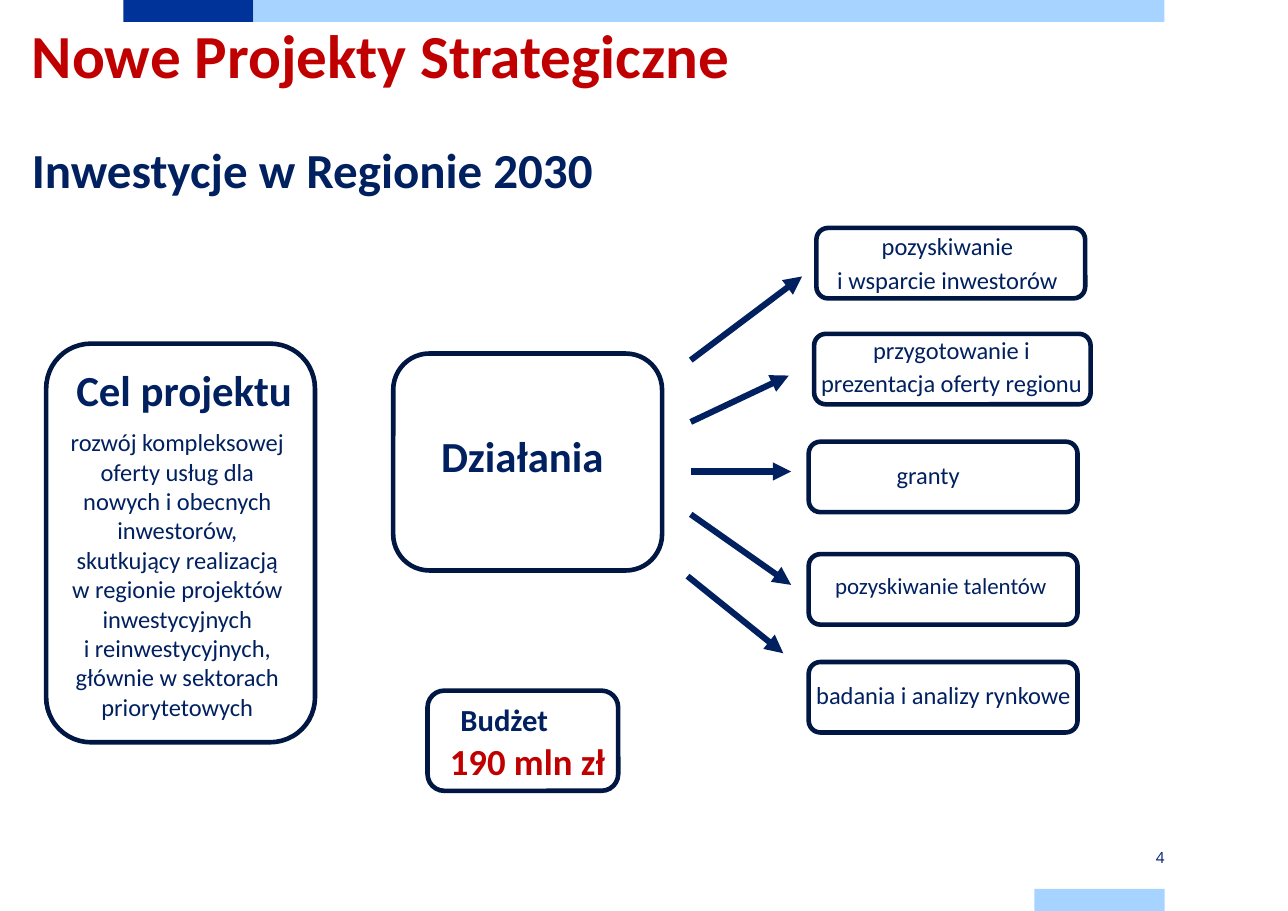
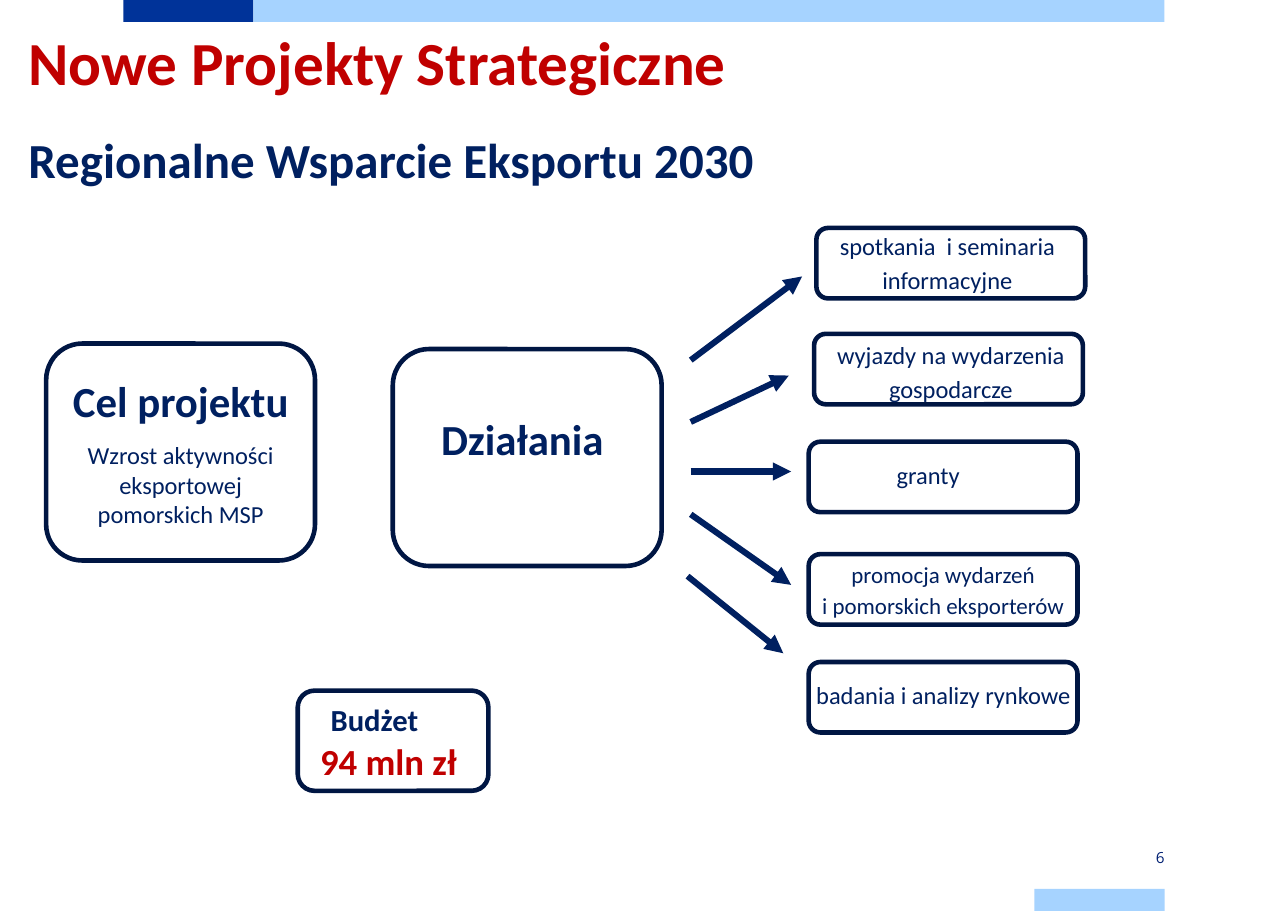
from dataclasses import dataclass

from lxml import etree
from pptx import Presentation
from pptx.dml.color import RGBColor
from pptx.enum.shapes import MSO_CONNECTOR as Connector, MSO_SHAPE as Preset
from pptx.enum.text import MSO_ANCHOR as Anchor, MSO_AUTO_SIZE as AutoSize, PP_ALIGN as Align
from pptx.oxml.ns import qn
from pptx.util import Pt


@dataclass(frozen=True)
class Theme:
    font: str = "Calibri"
    page_font: str = "Open Sans"
    navy: str = "002060"
    outline: str = "001643"
    red: str = "C00000"
    page_ink: str = "002073"
    band_dark: str = "003399"
    band_light: str = "A6D3FF"
    title: int = 40
    project: int = 32
    heading: int = 28
    amount: int = 24
    label: int = 20
    body: int = 16
    small: int = 15
    page: int = 10
    outline_width: int = 3
    arrow_width: int = 4


THEME = Theme()
SLIDE_SIZE = (841.68, 595.44)

# Shared content and places: left, top, width, height
TITLE = "Nowe Projekty Strategiczne"
BANDS = [
    ((80.6, 0, 85, 14.4), THEME.band_dark),
    ((165.6, 0, 595.4, 14.4), THEME.band_light),
    ((676, 581, 85, 14.4), THEME.band_light),
]
PAGE_NUMBER = (676, 553, 85, 14.4)
BUDGET_TOP, BUDGET_SIZE = 451.4, (124.6, 65.5)
ACTION_PLACES = [(533.5, 149), (532, 218.2), (528.5, 288.7), (528.5, 362.2), (528.5, 432.7)]
ACTION_WIDTH, ACTION_HEIGHT = 175.7, 46.1
ARROWS = [
    ((451.4, 235.4), (524.2, 180.7)),
    ((451.4, 275.8), (515.5, 245.5)),
    ((451.4, 308.2), (517, 308.2)),
    ((451.4, 336.2), (517, 382.3)),
    ((449.3, 376.6), (511.9, 427)),
]

# Actions: text, place of the text, its format, width of the frame
GRANTS = ("granty", (578.9, 294.5, 71.3, 28), {}, ACTION_WIDTH)
RESEARCH = ("badania i analizy rynkowe", (526.3, 437.8, 182, 28), {}, ACTION_WIDTH)
CENTERED = {"align": Align.CENTER}
CENTERED_SMALL = {"align": Align.CENTER, "size": THEME.small}

PROJECTS = [
    {
        "page": "4",
        "title_place": (13.7, 8, 805, 55.4),
        "project": "Inwestycje w Regionie 2030",
        "project_place": (13.7, 87.8, 421.2, 46),
        "goal": "rozwój kompleksowej oferty usług dla nowych i obecnych inwestorów, "
                "skutkujący realizacją w regionie projektów inwestycyjnych\n"
                "i reinwestycyjnych, głównie w sektorach priorytetowych",
        "goal_frame": (30.2, 224.6, 175.7, 260.6),
        "goal_heading": (35.3, 234, 170, 41),
        "goal_text": (36.7, 275.8, 158.4, 200.9),
        "actions_frame": (257, 231.1, 175.7, 141.8),
        "actions_heading": (256.3, 277.2, 170, 41),
        "budget": "190 mln zł",
        "budget_left": 279.4,
        "actions": [
            ("pozyskiwanie\ni wsparcie inwestorów", (537.8, 144.7, 162.7, 50.4),
             CENTERED, ACTION_WIDTH),
            ("przygotowanie i prezentacja oferty regionu", (528.3, 212.4, 187, 50.4),
             CENTERED, 180.7),
            GRANTS,
            ("pozyskiwanie talentów", (527, 367.2, 175.7, 26.6), CENTERED_SMALL, ACTION_WIDTH),
            RESEARCH,
        ],
    },
    {
        "page": "6",
        "title_place": (11.5, 12.2, 805, 55.4),
        "project": "Regionalne Wsparcie Eksportu 2030",
        "project_place": (11.5, 81.4, 540, 46),
        "goal": "Wzrost aktywności eksportowej pomorskich MSP",
        "goal_frame": (30.2, 224.6, 175.7, 141.8),
        "goal_heading": (33.1, 241.2, 170, 41),
        "goal_text": (38.9, 284.4, 158.4, 65.5),
        "actions_frame": (256.7, 228.2, 175.7, 141.8),
        "actions_heading": (256.3, 266.4, 170, 41),
        "budget": "94 mln zł",
        "budget_left": 194.6,
        "actions": [
            ("spotkania  i seminaria informacyjne", (537.8, 144.7, 162.7, 50.4),
             CENTERED, ACTION_WIDTH),
            ("wyjazdy na wydarzenia gospodarcze", (538.6, 216, 165.6, 50.4),
             CENTERED, ACTION_WIDTH),
            GRANTS,
            ("promocja wydarzeń\ni pomorskich eksporterów", (528.5, 360, 175.7, 47.5),
             CENTERED_SMALL, ACTION_WIDTH),
            RESEARCH,
        ],
    },
]


def points(values):
    return [Pt(value) for value in values]


def write(frame, text, *, size=THEME.body, color=THEME.navy, bold=False, align=Align.LEFT,
          spacing=None, font=THEME.font, anchor=Anchor.TOP, auto_size=AutoSize.SHAPE_TO_FIT_TEXT):
    frame.word_wrap = True
    frame.auto_size = auto_size
    frame.vertical_anchor = anchor
    paragraph = frame.paragraphs[0]
    paragraph.text = text
    paragraph.alignment = align
    paragraph.line_spacing = spacing
    for run in paragraph.runs:
        run.font.name = font
        run.font.size = Pt(size)
        run.font.bold = bold
        run.font.color.rgb = RGBColor.from_string(color)


def add_text(slide, place, text, **look):
    frame = slide.shapes.add_textbox(*points(place)).text_frame
    write(frame, text, **look)
    return frame


def add_frame(slide, place):
    frame = slide.shapes.add_shape(Preset.ROUNDED_RECTANGLE, *points(place))
    frame.shadow.inherit = False
    frame.fill.background()
    frame.line.color.rgb = RGBColor.from_string(THEME.outline)
    frame.line.width = Pt(THEME.outline_width)


def add_arrow(slide, start, end):
    arrow = slide.shapes.add_connector(Connector.STRAIGHT, *points(start + end))
    arrow.line.color.rgb = RGBColor.from_string(THEME.navy)
    arrow.line.width = Pt(THEME.arrow_width)
    etree.SubElement(arrow.line._get_or_add_ln(), qn("a:tailEnd"), type="triangle")
    etree.SubElement(arrow.element.spPr, qn("a:effectLst"))


def move_bands_to_layout(slide):
    """Draw the bands on a slide, then hand them to its layout."""
    tree = slide.slide_layout.element.cSld.spTree
    for place, color in BANDS:
        band = slide.shapes.add_shape(Preset.RECTANGLE, *points(place))
        band.shadow.inherit = False
        band.fill.solid()
        band.fill.fore_color.rgb = RGBColor.from_string(color)
        band.line.fill.background()
        tree.append(band.element)


def build_project(slide, project):
    # Titles and page number
    title = slide.shapes.title
    title.left, title.top, title.width, title.height = points(project["title_place"])
    write(title.text_frame, TITLE, size=THEME.title, color=THEME.red, bold=True,
          auto_size=AutoSize.NONE)
    add_text(slide, project["project_place"], project["project"], size=THEME.project, bold=True)
    page = add_text(slide, PAGE_NUMBER, project["page"], size=THEME.page, color=THEME.page_ink,
                    font=THEME.page_font, align=Align.RIGHT, anchor=Anchor.MIDDLE,
                    auto_size=AutoSize.NONE)
    page.margin_left = page.margin_right = 0
    page.margin_top = page.margin_bottom = Pt(5.76)

    # Budget
    left = project["budget_left"]
    add_frame(slide, (left, BUDGET_TOP, *BUDGET_SIZE))
    add_text(slide, (left + 7.5, BUDGET_TOP + 28.1, 149, 36), project["budget"],
             size=THEME.amount, color=THEME.red, bold=True)
    add_text(slide, (left + 14.4, BUDGET_TOP + 2.9, 114.5, 31.7), "Budżet",
             size=THEME.label, bold=True)

    # Goal and actions headings
    for part, heading in (("goal", "Cel projektu"), ("actions", "Działania")):
        add_frame(slide, project[part + "_frame"])
        add_text(slide, project[part + "_heading"], heading, size=THEME.heading, bold=True,
                 align=Align.CENTER)
    add_text(slide, project["goal_text"], project["goal"], align=Align.CENTER)

    # Actions with their arrows
    for corner, ends, action in zip(ACTION_PLACES, ARROWS, project["actions"]):
        text, place, look, width = action
        add_frame(slide, (*corner, width, ACTION_HEIGHT))
        add_arrow(slide, *ends)
        add_text(slide, place, text, spacing=1.15, **look)


def main():
    deck = Presentation()
    deck.slide_width, deck.slide_height = points(SLIDE_SIZE)
    title_only = deck.slide_layouts[5]
    slides = [deck.slides.add_slide(title_only) for _ in PROJECTS]
    move_bands_to_layout(slides[0])
    for slide, project in zip(slides, PROJECTS):
        build_project(slide, project)
    deck.save("out.pptx")


if __name__ == "__main__":
    main()
